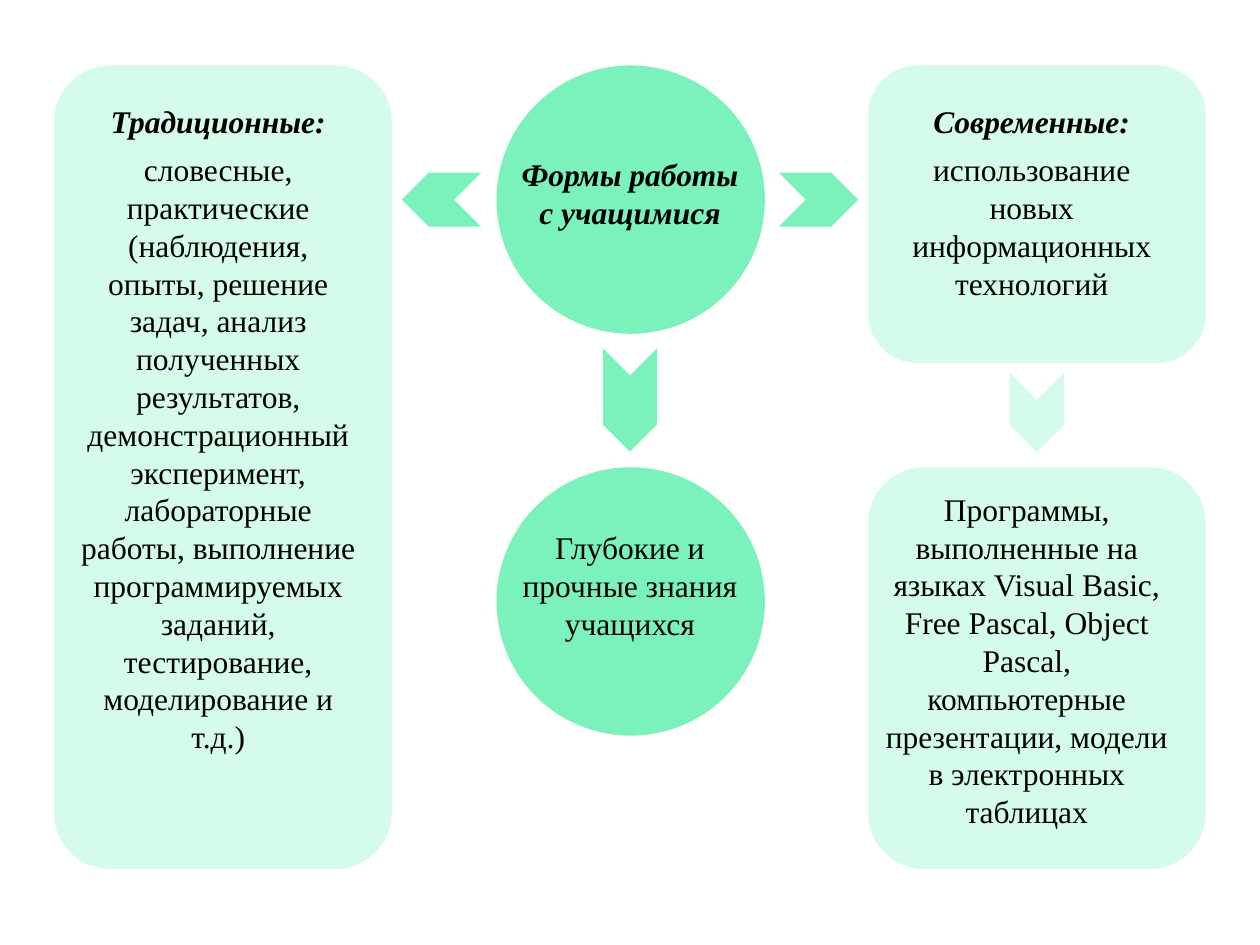
"""Build a one-slide diagram of forms of work with students."""
from dataclasses import dataclass

from pptx import Presentation
from pptx.dml.color import RGBColor
from pptx.enum.shapes import MSO_SHAPE as Shp
from pptx.enum.text import MSO_ANCHOR as Anchor, MSO_AUTO_SIZE as AutoSize, PP_ALIGN as Align
from pptx.util import Cm, Pt

MINT, PALE, BLACK = "7BF1BC", "D5FBEA", "000000"
TOP, LOWER = 1.32, 9.42
LEFT, MIDDLE, RIGHT = 1.09, 10.01, 17.5
CARD_W, CIRCLE = 6.81, 5.41
ARROW_H, ARROW_TOP = 1.09, 3.48


@dataclass(frozen=True)
class Block:
    kind: Shp
    left: float
    top: float
    width: float
    height: float
    color: str
    rotation: float = 0


@dataclass(frozen=True)
class Para:
    text: str
    heading: bool = False
    after: float = 0


@dataclass(frozen=True)
class Label:
    left: float
    top: float
    width: float
    height: float
    paras: tuple[Para, ...]


BLOCKS = (
    Block(Shp.OVAL, MIDDLE, TOP, CIRCLE, CIRCLE, MINT),
    Block(Shp.OVAL, MIDDLE, LOWER, CIRCLE, CIRCLE, MINT),
    Block(Shp.ROUNDED_RECTANGLE, LEFT, TOP, CARD_W, 16.2, PALE),
    Block(Shp.ROUNDED_RECTANGLE, RIGHT, TOP, CARD_W, 6, PALE),
    Block(Shp.ROUNDED_RECTANGLE, RIGHT, LOWER, CARD_W, 8.1, PALE),
    Block(Shp.CHEVRON, 8.1, ARROW_TOP, 1.6, ARROW_H, MINT, 180),
    Block(Shp.CHEVRON, 15.7, ARROW_TOP, 1.6, ARROW_H, MINT),
    Block(Shp.CHEVRON, 11.66, 7.52, 2.08, ARROW_H, MINT, 90),
    Block(Shp.CHEVRON, 20.1, 7.77, 1.6, ARROW_H, PALE, 90),
)

TITLE = Label(10.2, 3, 5, 1.8, (Para("Формы работы", True), Para("с учащимися", True)))

LABELS = (
    Label(1.3, 1.93, 6.2, 13.54, (
        Para("Традиционные:", True, 6),
        Para("словесные,"),
        Para("практические (наблюдения, опыты, решение задач, анализ полученных "
             "результатов, демонстрационный эксперимент, лабораторные работы, "
             "выполнение программируемых заданий, тестирование, моделирование и т.д.)"),
    )),
    Label(17.7, 1.93, 6.2, 4.32, (
        Para("Современные:", True, 6),
        Para("использование новых информационных технологий"),
    )),
    Label(17.6, 9.75, 6.2, 7.19, (
        Para("Программы, выполненные на языках Visual Basic, Free Pascal, Object Pascal, "
             "компьютерные презентации, модели в электронных таблицах", after=6),
    )),
    Label(10.2, 10.52, 5, 2.57, (Para("Глубокие и прочные знания учащихся"),)),
)


def paint(color_format, color: str) -> None:
    """Set a colour format from a hex string."""
    color_format.rgb = RGBColor.from_string(color)


def add_block(s, block: Block) -> None:
    """Draw one filled shape without outline."""
    sp = s.shapes.add_shape(block.kind, Cm(block.left), Cm(block.top),
                            Cm(block.width), Cm(block.height))
    sp.rotation = block.rotation
    sp.shadow.inherit = False
    sp.fill.solid()
    paint(sp.fill.fore_color, block.color)
    sp.line.fill.background()


def fill_label(sp, label: Label) -> None:
    """Place a text holder and write its paragraphs."""
    sp.left, sp.top = Cm(label.left), Cm(label.top)
    sp.width, sp.height = Cm(label.width), Cm(label.height)
    tf = sp.text_frame
    tf.word_wrap = True
    tf.auto_size = AutoSize.NONE
    tf.vertical_anchor = Anchor.TOP
    for i, para in enumerate(label.paras):
        p = tf.add_paragraph() if i else tf.paragraphs[0]
        p.alignment = Align.CENTER
        p.space_after = Pt(para.after)
        r = p.add_run()
        r.text = para.text
        r.font.name = "Times New Roman"
        r.font.size = Pt(18)
        r.font.bold = r.font.italic = para.heading
        paint(r.font.color, BLACK)


def main() -> None:
    """Create and save the presentation."""
    prs = Presentation()
    prs.slide_width, prs.slide_height = Cm(25.4), Cm(19.05)
    s = prs.slides.add_slide(prs.slide_layouts[5])
    for block in BLOCKS:
        add_block(s, block)
    title = s.shapes.title
    title.element.getparent().append(title.element)
    fill_label(title, TITLE)
    for label in LABELS:
        fill_label(s.shapes.add_textbox(0, 0, 0, 0), label)
    prs.save("out.pptx")


if __name__ == "__main__":
    main()
